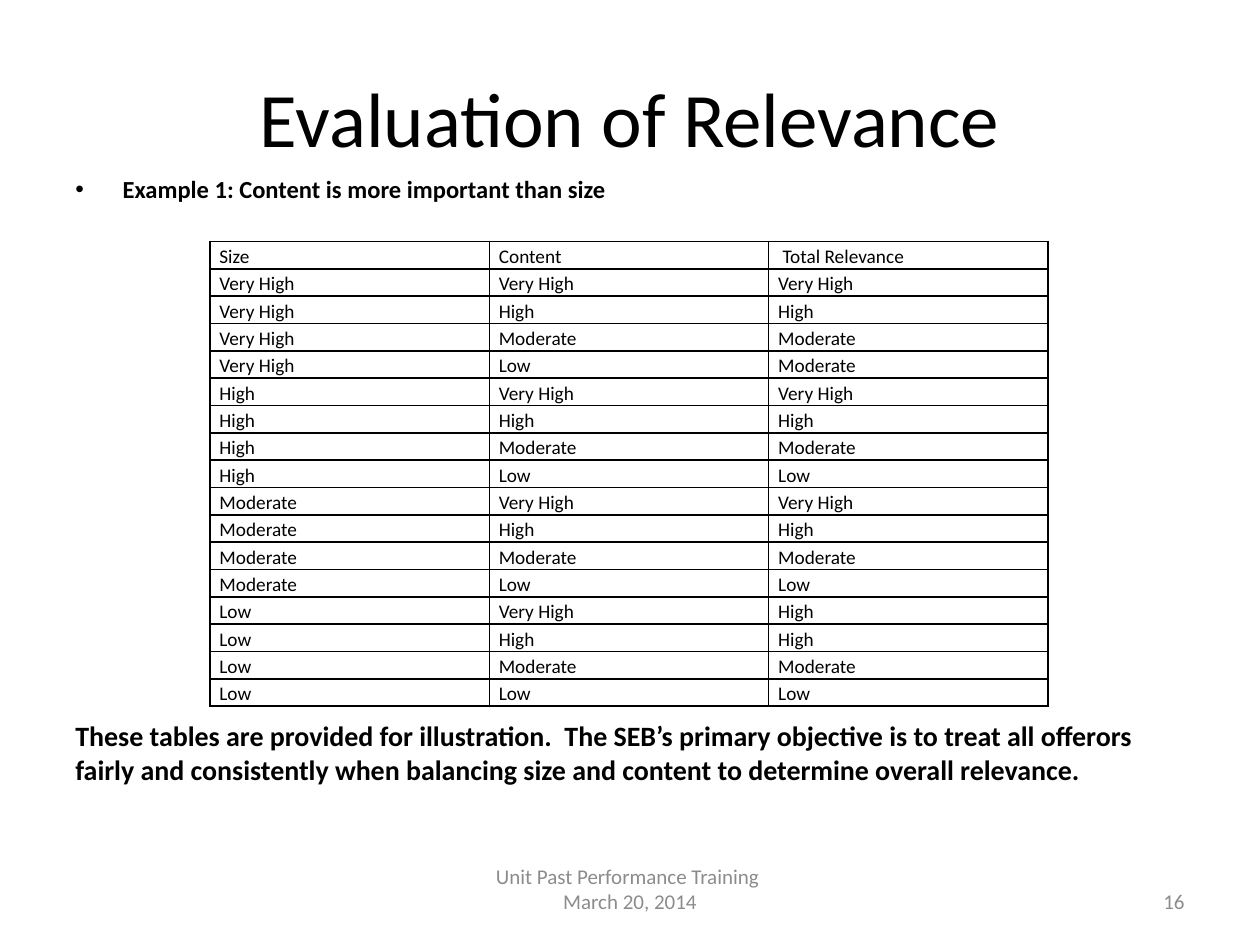
from lxml.etree import SubElement
from pptx import Presentation
from pptx.dml.color import RGBColor
from pptx.enum.text import MSO_ANCHOR as Anchor, PP_ALIGN as Align
from pptx.oxml.ns import qn
from pptx.util import Pt

FONT = "Calibri"
BLACK, GREY = "000000", "8C8C8C"
HEADINGS = ["Size", "Content", " Total Relevance"]
LEVELS = ["Very High", "High", "Moderate", "Low"]
# Total relevance per size, in the order of the content levels
TOTALS = {
    "Very High": ["Very High", "High", "Moderate", "Moderate"],
    "High": ["Very High", "High", "Moderate", "Low"],
    "Moderate": ["Very High", "High", "Moderate", "Low"],
    "Low": ["High", "High", "Moderate", "Low"],
}


def color(hex_string):
    return RGBColor.from_string(hex_string)


def add_run(p, text, size, hex_color=BLACK, bold=False):
    r = p.add_run()
    r.text = text
    r.font.name = FONT
    r.font.size = Pt(size)
    r.font.bold = bold
    r.font.color.rgb = color(hex_color)


def add_text_box(s, box, anchor=Anchor.TOP):
    tf = s.shapes.add_textbox(*map(Pt, box)).text_frame
    tf.word_wrap = True
    tf.vertical_anchor = anchor
    return tf


def add_bullet(p, indent):
    pPr = p._p.get_or_add_pPr()
    pPr.set("marL", str(Pt(indent)))
    pPr.set("indent", str(-Pt(indent)))
    SubElement(pPr, qn("a:buFont"), typeface="Arial")
    SubElement(pPr, qn("a:buChar"), char="•")


def add_borders(cell, width=1):
    tcPr = cell._tc.get_or_add_tcPr()
    for i, side in enumerate(("lnL", "lnR", "lnT", "lnB")):
        ln = SubElement(tcPr, qn(f"a:{side}"), w=str(Pt(width)))
        fill = SubElement(ln, qn("a:solidFill"))
        SubElement(fill, qn("a:srgbClr"), val=BLACK)
        tcPr.insert(i, ln)


def place_title(s, box):
    sp = s.shapes.title
    sp.left, sp.top, sp.width, sp.height = map(Pt, box)
    tf = sp.text_frame
    tf.vertical_anchor = Anchor.MIDDLE
    p = tf.paragraphs[0]
    p.alignment = Align.CENTER
    add_run(p, "Evaluation of Relevance", 44)


def place_body(s, box, table_gap):
    tf = add_text_box(s, box)
    p = tf.paragraphs[0]
    add_bullet(p, 27)
    add_run(p, "Example 1: Content is more important than size", 14, bold=True)
    # Closing remark, below the room left for the table
    p = tf.add_paragraph()
    p.space_before = Pt(table_gap)
    add_run(p, "These tables are provided for illustration.  The SEB’s primary "
               "objective is to treat all offerors fairly and consistently when "
               "balancing size and content to determine overall relevance.",
            16, bold=True)


def place_table(s, box):
    rows = [HEADINGS] + [[size, content, total]
                         for size, totals in TOTALS.items()
                         for content, total in zip(LEVELS, totals)]
    table = s.shapes.add_table(len(rows), len(HEADINGS), *map(Pt, box)).table
    table.first_row = table.horz_banding = False
    for row, texts in zip(table.rows, rows):
        row.height = Pt(box[3] / len(rows))
        for cell, text in zip(row.cells, texts):
            cell.margin_left = cell.margin_right = Pt(5.4)
            cell.margin_top = cell.margin_bottom = 0
            cell.fill.background()
            add_borders(cell)
            p = cell.text_frame.paragraphs[0]
            p.line_spacing = 1.15
            add_run(p, text, 11)


def place_footer(s, box):
    tf = add_text_box(s, box, Anchor.MIDDLE)
    tf.margin_bottom = Pt(17.8)  # lifts the two lines by half a line
    lines = ["Unit Past Performance Training ", "March 20, 2014"]
    for i, line in enumerate(lines):
        p = tf.add_paragraph() if i else tf.paragraphs[0]
        p.alignment = Align.CENTER
        add_run(p, line, 12, GREY)


def place_slide_number(s, box):
    p = add_text_box(s, box, Anchor.MIDDLE).paragraphs[0]
    p.alignment = Align.RIGHT
    add_run(p, "16", 12, GREY)


def main():
    prs = Presentation()
    prs.slide_width, prs.slide_height = Pt(720), Pt(540)
    s = prs.slides.add_slide(prs.slide_layouts[5])
    place_title(s, (36, 21.6, 648, 90))
    place_body(s, (36, 95.8, 648, 396), table_gap=294.5)
    place_slide_number(s, (516, 500.4, 168, 28.8))
    place_footer(s, (246, 500.4, 228, 28.8))
    place_table(s, (120, 138, 479, 265.7))
    prs.save("out.pptx")


if __name__ == "__main__":
    main()
